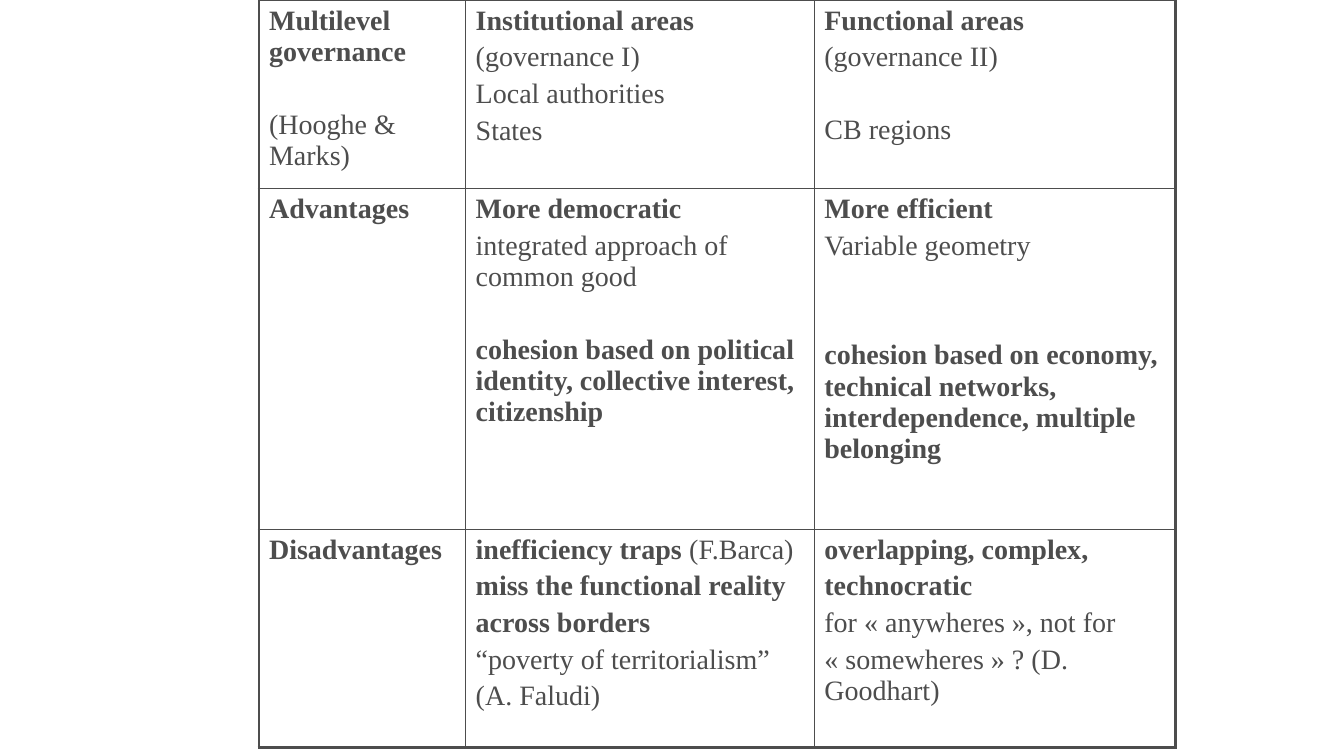
from lxml.etree import SubElement
from pptx import Presentation
from pptx.dml.color import RGBColor
from pptx.oxml.ns import qn
from pptx.util import Pt

GREY = "4D4D4D"
LINE_STEP = 26.1
PARAGRAPH_GAP = 4
THIN, THICK = 1, 2.25
COLUMN_WIDTHS = [147.6, 249.1, 257.8]
ROW_HEIGHTS = [134.6, 243.4, 156.2]

BOLD, PLAIN = True, False
GOVERNANCE_ROWS = [
    [
        [(0, [("Multilevel governance", BOLD)]),
         (1, [("(Hooghe & Marks)", PLAIN)])],
        [(0, [("Institutional areas", BOLD)]),
         (0, [("(governance I)", PLAIN)]),
         (0, [("Local authorities", PLAIN)]),
         (0, [("States", PLAIN)])],
        [(0, [("Functional areas", BOLD)]),
         (0, [("(governance II)", PLAIN)]),
         (1, [("CB regions", PLAIN)])],
    ],
    [
        [(0, [("Advantages", BOLD)])],
        [(0, [("More democratic", BOLD)]),
         (0, [("integrated approach of common good", PLAIN)]),
         (1, [("cohesion based on political identity, collective interest, citizenship", BOLD)])],
        [(0, [("More efficient", BOLD)]),
         (0, [("Variable geometry", PLAIN)]),
         (2, [("cohesion based on economy, technical networks, "
               "interdependence, multiple belonging", BOLD)])],
    ],
    [
        [(0, [("Disadvantages", BOLD)])],
        [(0, [("inefficiency traps ", BOLD), ("(F.Barca)", PLAIN)]),
         (0, [("miss the functional reality", BOLD)]),
         (0, [("across borders", BOLD)]),
         (0, [("“poverty of territorialism”", PLAIN)]),
         (0, [("(A. Faludi)", PLAIN)])],
        [(0, [("overlapping, complex,", BOLD)]),
         (0, [("technocratic", BOLD)]),
         (0, [("for « anywheres », not for", PLAIN)]),
         (0, [("« somewheres » ? (D. Goodhart)", PLAIN)])],
    ],
]


def color(hex_string):
    return RGBColor.from_string(hex_string)


def add_text(paragraph, text, size=20, bold=False, font="Times New Roman", fill=GREY):
    run = paragraph.add_run()
    run.text = text
    run.font.size = Pt(size)
    run.font.bold = bold
    run.font.name = font
    run.font.color.rgb = color(fill)


def set_borders(cell, **widths):
    properties = cell._tc.get_or_add_tcPr()
    for position, (side, width) in enumerate(widths.items()):
        line = SubElement(properties, qn(f"a:{side}"), w=str(Pt(width)))
        solid_fill = SubElement(line, qn("a:solidFill"))
        SubElement(solid_fill, qn("a:srgbClr"), val=GREY)
        properties.insert(position, line)


def fill_cell(cell, paragraphs):
    cell.margin_left = cell.margin_right = Pt(7.2)
    cell.margin_top = cell.margin_bottom = Pt(3.6)
    cell.fill.background()
    frame = cell.text_frame
    for index, (skipped_lines, runs) in enumerate(paragraphs):
        paragraph = frame.add_paragraph() if index else frame.paragraphs[0]
        paragraph.space_before = Pt(PARAGRAPH_GAP + skipped_lines * LINE_STEP)
        for text, bold in runs:
            add_text(paragraph, text, bold=bold)


def add_governance_table(slide, left, top, widths, heights, rows):
    frame = slide.shapes.add_table(
        len(heights), len(widths), Pt(left), Pt(top), Pt(sum(widths)), Pt(sum(heights)))
    table = frame.table
    table.first_row = False
    table.horz_banding = False
    for column, width in zip(table.columns, widths):
        column.width = Pt(width)
    for row, height in zip(table.rows, heights):
        row.height = Pt(height)
    last_row, last_column = len(heights) - 1, len(widths) - 1
    for row_index, row in enumerate(rows):
        for column_index, paragraphs in enumerate(row):
            cell = table.cell(row_index, column_index)
            fill_cell(cell, paragraphs)
            set_borders(
                cell,
                lnL=THICK if column_index == 0 else THIN,
                lnR=THICK if column_index == last_column else THIN,
                lnT=THICK if row_index == 0 else THIN,
                lnB=THICK if row_index == last_row else THIN,
            )


def main():
    presentation = Presentation()
    presentation.slide_width = Pt(960)
    presentation.slide_height = Pt(540)
    slide = presentation.slides.add_slide(presentation.slide_layouts[6])
    add_governance_table(slide, 185, 0, COLUMN_WIDTHS, ROW_HEIGHTS, GOVERNANCE_ROWS)
    presentation.save("out.pptx")


if __name__ == "__main__":
    main()
